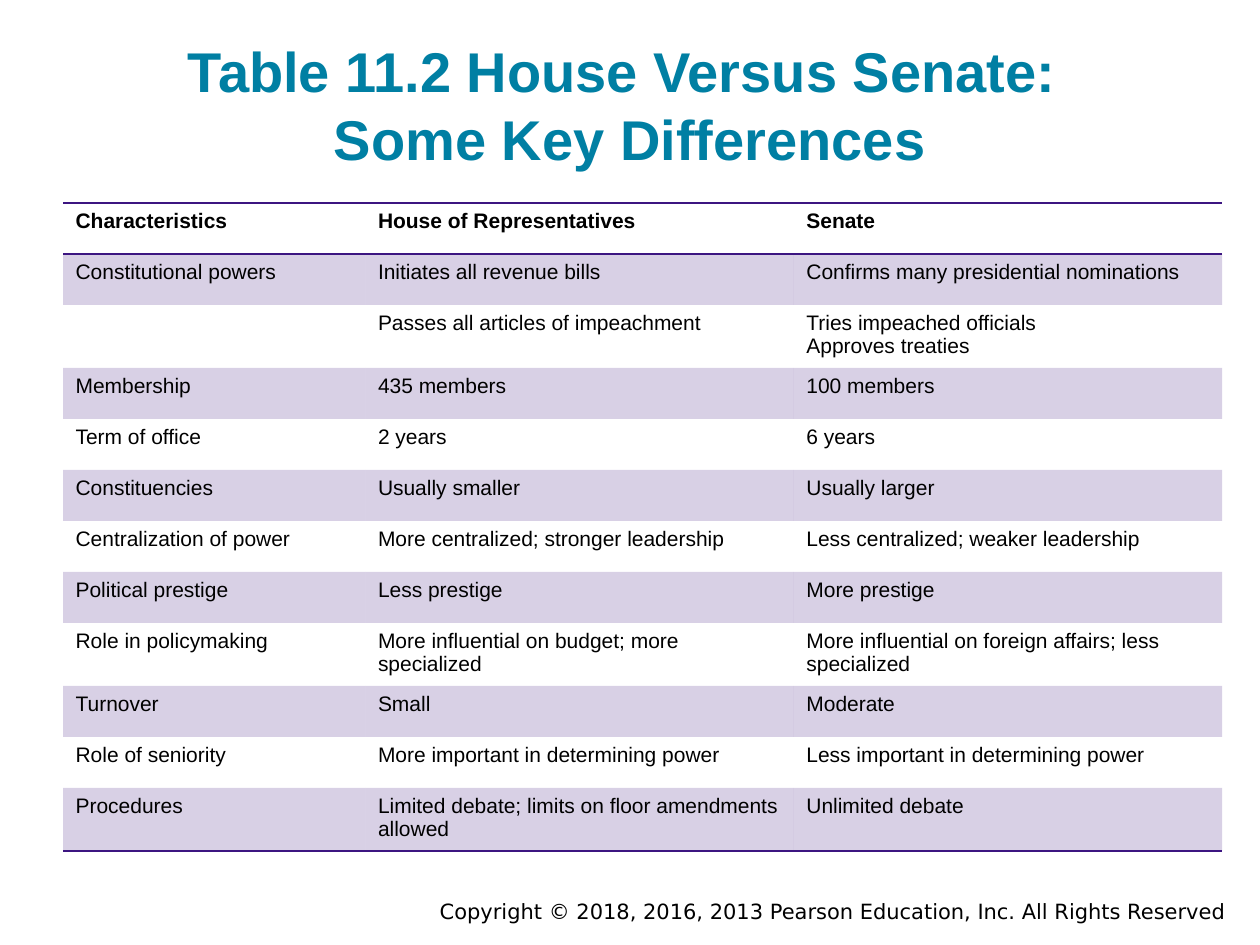
from pptx import Presentation
from pptx.dml.color import RGBColor as RGB
from pptx.enum.text import MSO_ANCHOR as ANCHOR, PP_ALIGN as ALIGN
from pptx.oxml.ns import qn
from pptx.util import Inches, Pt
from lxml.etree import SubElement

TITLE = "Table 11.2 House Versus Senate: \vSome Key Differences"
FOOTER = "Copyright © 2018, 2016, 2013 Pearson Education, Inc. All Rights Reserved"
ROWS = [
    ("Characteristics", "House of Representatives", "Senate"),
    ("Constitutional powers", "Initiates all revenue bills", "Confirms many presidential nominations"),
    ("", "Passes all articles of impeachment", "Tries impeached officials\nApproves treaties"),
    ("Membership", "435 members", "100 members"),
    ("Term of office", "2 years", "6 years"),
    ("Constituencies", "Usually smaller", "Usually larger"),
    ("Centralization of power", "More centralized; stronger leadership", "Less centralized; weaker leadership"),
    ("Political prestige", "Less prestige", "More prestige"),
    ("Role in policymaking", "More influential on budget; more specialized",
     "More influential on foreign affairs; less specialized"),
    ("Turnover", "Small", "Moderate"),
    ("Role of seniority", "More important in determining power", "Less important in determining power"),
    ("Procedures", "Limited debate; limits on floor amendments allowed", "Unlimited debate"),
]
COL_WIDTHS = [2.4, 3.4, 3.4]
ROW_HEIGHT = 0.405
COLORS = {"title": "007FA3", "text": "000000", "purple": "3C1581"}
NO_STYLE = "{2D5ABB26-0587-4C30-8999-92F81FD0307C}"


def style(p, size, color, font="Arial", bold=False, align=None):
    p.alignment = align
    p.font.size = Pt(size)
    p.font.name = font
    p.font.bold = bold
    p.font.color.rgb = RGB.from_string(COLORS[color])
    for r in p.runs:
        r.font.size = Pt(size)
        r.font.name = font
        r.font.bold = bold
        r.font.color.rgb = RGB.from_string(COLORS[color])


def add_border(cell, tag):
    ln = SubElement(cell._tc.get_or_add_tcPr(), qn(tag), w=str(Pt(1)))
    fill = SubElement(ln, qn("a:solidFill"))
    SubElement(fill, qn("a:srgbClr"), val=COLORS["purple"])


def tint(cell, percent):
    cell.fill.solid()
    cell.fill.fore_color.rgb = RGB.from_string(COLORS["purple"])
    clr = cell._tc.tcPr.find(qn("a:solidFill")).find(qn("a:srgbClr"))
    SubElement(clr, qn("a:alpha"), val=str(percent * 1000))


def add_title(s):
    sp = s.shapes.title
    sp.left, sp.top, sp.width, sp.height = map(Inches, (0.5, 0.26, 9, 1.2))
    tf = sp.text_frame
    tf.text = TITLE
    tf.word_wrap = True
    tf.vertical_anchor = ANCHOR.BOTTOM
    tf.margin_left = tf.margin_right = tf.margin_top = tf.margin_bottom = Inches(0.1)
    style(tf.paragraphs[0], 32, "title", bold=True, align=ALIGN.CENTER)


def add_footer(s):
    tf = s.shapes.add_textbox(*map(Inches, (2, 7.08, 7.83, 0.3))).text_frame
    tf.text = FOOTER
    tf.word_wrap = True
    style(tf.paragraphs[0], 12, "text", font="DejaVu Sans", align=ALIGN.RIGHT)


def add_comparison(s):
    size = sum(COL_WIDTHS), ROW_HEIGHT * len(ROWS)
    frame = s.shapes.add_table(len(ROWS), len(COL_WIDTHS), *map(Inches, (0.5, 1.61, *size)))
    table = frame.table
    table.horz_banding = False
    table._tbl.tblPr.find(qn("a:tableStyleId")).text = NO_STYLE
    for col, width in zip(table.columns, COL_WIDTHS):
        col.width = Inches(width)
    for i, row in enumerate(ROWS):
        table.rows[i].height = Inches(ROW_HEIGHT)
        for j, text in enumerate(row):
            cell = table.cell(i, j)
            cell.text = text
            for p in cell.text_frame.paragraphs:
                style(p, 12, "text", bold=i == 0)
            if i == 0:
                add_border(cell, "a:lnT")
            if i in (0, len(ROWS) - 1):
                add_border(cell, "a:lnB")
            if i % 2:
                tint(cell, 20)
            else:
                cell.fill.background()


prs = Presentation()
prs.slide_width, prs.slide_height = Inches(10), Inches(7.5)
s = prs.slides.add_slide(prs.slide_layouts[5])
add_footer(s)
add_title(s)
add_comparison(s)
prs.save("out.pptx")
